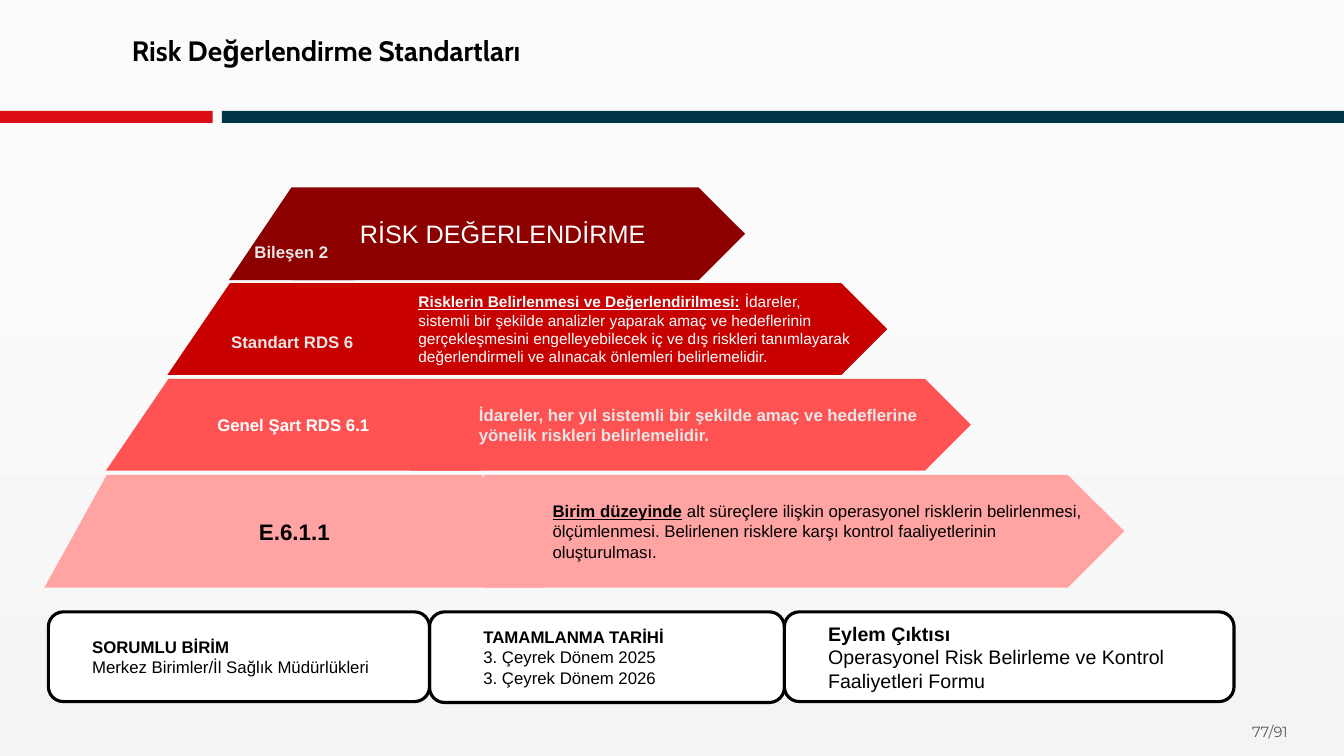
from copy import deepcopy

from pptx import Presentation
from pptx.dml.color import RGBColor
from pptx.enum.shapes import MSO_SHAPE as Shape
from pptx.enum.text import MSO_ANCHOR as Anchor, PP_ALIGN as Align
from pptx.oxml.ns import qn
from pptx.util import Inches, Pt

BLACK = RGBColor(0x00, 0x00, 0x00)
WHITE = RGBColor(0xFF, 0xFF, 0xFF)
PALE = RGBColor(0xE7, 0xE6, 0xE6)
GREY = RGBColor(0x59, 0x59, 0x59)
RED = RGBColor(0xDC, 0x0C, 0x15)
NAVY = RGBColor(0x00, 0x35, 0x46)
MAROON = RGBColor(0x8C, 0x00, 0x00)
CRIMSON = RGBColor(0xC8, 0x00, 0x00)
CORAL = RGBColor(0xFF, 0x53, 0x53)
PINK = RGBColor(0xFF, 0xA3, 0xA3)
BACKDROP = [(0, RGBColor(0xFB, 0xFB, 0xFB)), (0.44, RGBColor(0xFA, 0xFA, 0xFA)),
            (1, RGBColor(0xF4, 0xF4, 0xF4))]

FIRST_TOP, LEVEL_STEP = 1.86, 0.95
FIRST_LEFT, FIRST_RIGHT = 2.27, 3.51
SLANT = 0.62
BOLD = {"bold": True}
HEADING = {"bold": True, "underline": True}

# fill, height, label, label format, label top inset,
# arrow left, arrow width, arrow text runs, arrow text format
LEVELS = [
    (MAROON, 0.92, "Bileşen 2", {"size": Pt(12), "color": PALE}, 0.38,
     2.89, 4.5, [("RİSK DEĞERLENDİRME", {})], {"size": Pt(18), "color": WHITE}),
    (CRIMSON, 0.91, "Standart RDS 6", {"size": Pt(12), "color": PALE}, 0.28,
     3.47, 5.33,
     [("Risklerin Belirlenmesi ve Değerlendirilmesi:", HEADING),
      (" İdareler, sistemli bir şekilde analizler yaparak amaç ve hedeflerinin "
       "gerçekleşmesini engelleyebilecek iç ve dış riskleri tanımlayarak "
       "değerlendirmeli ve alınacak önlemleri belirlemelidir.", {})],
     {"size": Pt(11), "color": WHITE}),
    (CORAL, 0.91, "Genel Şart RDS 6.1", {"size": Pt(12), "color": WHITE}, 0.03,
     4.07, 5.56,
     [("İdareler, her yıl sistemli bir şekilde amaç ve hedeflerine yönelik "
       "riskleri belirlemelidir.", BOLD)],
     {"size": Pt(12), "color": PALE}),
    (PINK, 1.12, "E.6.1.1", {"size": Pt(16), "color": BLACK}, 0.03,
     4.8, 6.35,
     [("Birim düzeyinde", HEADING),
      (" alt süreçlere ilişkin operasyonel risklerin belirlenmesi, ölçümlenmesi. "
       "Belirlenen risklere karşı kontrol faaliyetlerinin oluşturulması.", {})],
     {"size": Pt(12), "color": BLACK}),
]

# left, width, height, text indent, text size, heading, lines
CARDS = [
    (4.26, 3.52, 0.9, 0.39, 12, "TAMAMLANMA TARİHİ",
     ["3. Çeyrek Dönem 2025", "3. Çeyrek Dönem 2026"]),
    (0.48, 3.78, 0.89, 0.29, 12, "SORUMLU BİRİM",
     ["Merkez Birimler/İl Sağlık Müdürlükleri"]),
    (7.78, 4.46, 0.89, 0.29, 14, "Eylem Çıktısı",
     ["Operasyonel Risk Belirleme ve Kontrol Faaliyetleri Formu"]),
]


def paint_background(page):
    fill = page.background.fill
    fill.gradient()
    fill.gradient_angle = 270
    stops = page.element.find(".//" + qn("a:gsLst"))
    stops.insert(1, deepcopy(stops[0]))
    for stop, (position, color) in zip(fill.gradient_stops, BACKDROP):
        stop.position = position
        stop.color.rgb = color


def paint(shape, fill):
    shape.shadow.inherit = False
    shape.fill.solid()
    shape.fill.fore_color.rgb = fill
    shape.line.fill.background()


def add_block(page, kind, left, top, width, height, fill):
    block = page.shapes.add_shape(kind, Inches(left), Inches(top), Inches(width), Inches(height))
    paint(block, fill)
    return block


def write(shape, paragraphs, base, align=Align.LEFT, anchor=Anchor.MIDDLE,
          insets=(0.1, 0.05, 0.1, 0.05)):
    """Fill a shape with paragraphs, each a list of (text, format) runs."""
    frame = shape.text_frame
    frame.word_wrap = True
    frame.vertical_anchor = anchor
    for side, inset in zip(("left", "top", "right", "bottom"), insets):
        setattr(frame, "margin_" + side, Inches(inset))
    for index, runs in enumerate(paragraphs):
        para = frame.add_paragraph() if index else frame.paragraphs[0]
        para.alignment = align
        for text, extra in runs:
            span = para.add_run()
            span.text = text
            values = {"name": "Arial", "bold": False, **base, **extra}
            span.font.color.rgb = values.pop("color")
            for name, value in values.items():
                setattr(span.font, name, value)


def add_text(page, left, top, width, height, text, base):
    box = page.shapes.add_textbox(Inches(left), Inches(top), Inches(width), Inches(height))
    write(box, [[(text, {})]], base, anchor=Anchor.TOP)
    return box


def add_slab(page, index, top, height, fill):
    """Draw one layer of the pyramid; each layer is wider than the one above."""
    left = FIRST_LEFT - 0.61 * index
    right = FIRST_RIGHT + 0.63 * index
    corners = [(left + SLANT, top), (right - SLANT, top), (right, top + height)]
    builder = page.shapes.build_freeform(Inches(left), Inches(top + height))
    builder.add_line_segments([(Inches(x), Inches(y)) for x, y in corners])
    slab = builder.convert_to_shape()
    paint(slab, fill)
    return slab


def add_level(page, index, level):
    fill, height, label, label_format, label_top, left, width, runs, text_format = level
    top = FIRST_TOP + LEVEL_STEP * index
    arrow = add_block(page, Shape.PENTAGON, left, top, width, height, fill)
    write(arrow, [runs], text_format, insets=(0.68, 0.05, 0.1, 0.05))
    slab = add_slab(page, index, top, height, fill)
    write(slab, [[(label, BOLD)]], label_format, Align.CENTER,
          insets=(0.02, label_top, 0.02, 0.03))


def add_card(page, left, width, height, indent, size, heading, lines):
    card = add_block(page, Shape.ROUNDED_RECTANGLE, left, 6.07, width, height, WHITE)
    card.line.color.rgb = BLACK
    card.line.width = Pt(2.25)
    write(card, [[(heading, BOLD)]] + [[(line, {})] for line in lines],
          {"size": Pt(size), "color": BLACK}, insets=(0.1 + indent, 0.05, 0.1, 0.05))


def main():
    deck = Presentation()
    deck.slide_width, deck.slide_height = Inches(13.33), Inches(7.5)
    page = deck.slides.add_slide(deck.slide_layouts[6])
    paint_background(page)
    add_text(page, 12.32, 7.12, 0.9, 0.4, "77/91",
             {"name": "Montserrat", "size": Pt(10.5), "color": GREY})
    add_block(page, Shape.RECTANGLE, 0, 1.1, 2.11, 0.12, RED)
    add_block(page, Shape.RECTANGLE, 2.2, 1.1, 11.13, 0.12, NAVY)
    title = add_text(page, 1.21, 0.32, 4.5, 0.46, "Risk Değerlendirme Standartları",
                     {"name": "Cabin", "size": Pt(20), "bold": True, "color": BLACK})
    title.text_frame.paragraphs[0].line_spacing = 0.9
    for index, level in enumerate(LEVELS):
        add_level(page, index, level)
    for card in CARDS:
        add_card(page, *card)
    deck.save("out.pptx")


if __name__ == "__main__":
    main()
